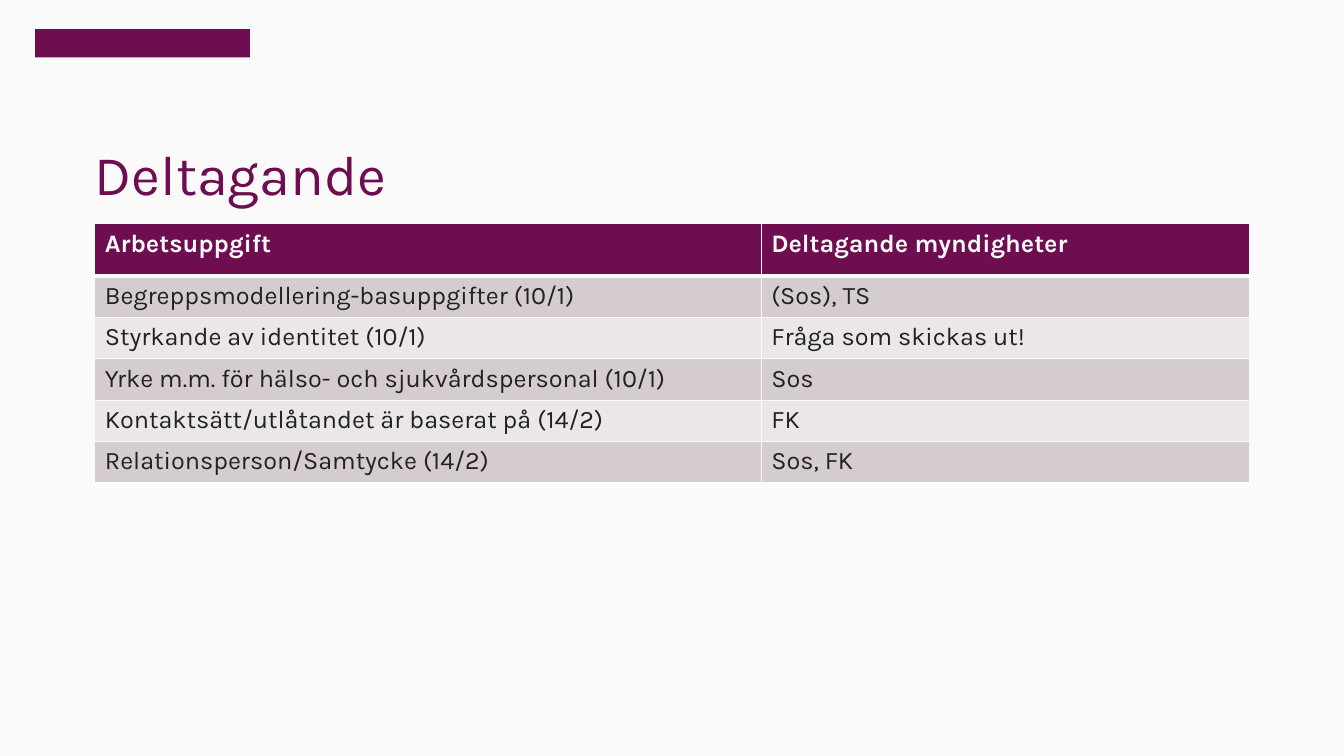
"""Build the slide that lists tasks and the authorities taking part."""
from lxml import etree
from pptx import Presentation
from pptx import util as u
from pptx.dml.color import RGBColor
from pptx.enum import shapes, text
from pptx.oxml.ns import qn

COLORS = {"plum": "6E0E50", "paper": "FAFAFA", "ink": "212121",
          "band": "D5CCD0", "light": "EBE7E9"}
ROWS = [
    ("Arbetsuppgift", "Deltagande myndigheter"),
    ("Begreppsmodellering-basuppgifter (10/1)", "(Sos), TS"),
    ("Styrkande av identitet (10/1)", "Fråga som skickas ut!"),
    ("Yrke m.m. för hälso- och sjukvårdspersonal (10/1)", "Sos"),
    ("Kontaktsätt/utlåtandet är baserat på (14/2)", "FK"),
    ("Relationsperson/Samtycke (14/2)", "Sos, FK"),
]
COL_WIDTHS = (6.61, 4.84)
HEADER_HEIGHT, ROW_HEIGHT = 0.52, 0.41
LEFT, WIDTH = 0.94, 11.45


def rgb(name):
    """Return the named colour."""
    return RGBColor.from_string(COLORS[name])


def paint(fill, color):
    """Give a fill one solid colour."""
    fill.solid()
    fill.fore_color.rgb = rgb(color)


def write(tf, words, size, color, bold=False):
    """Write one formatted line of text and return its paragraph."""
    p = tf.paragraphs[0]
    p.alignment = text.PP_ALIGN.LEFT
    r = p.add_run()
    r.text = words
    for key, value in {"name": "Karla", "size": u.Pt(size), "bold": bold}.items():
        setattr(r.font, key, value)
    r.font.color.rgb = rgb(color)
    return p


def add_title(s, words):
    """Place and format the title placeholder."""
    sp = s.shapes.title
    box = {"left": LEFT, "top": 1.45, "width": WIDTH, "height": 0.61}
    for key, value in box.items():
        setattr(sp, key, u.Inches(value))
    frame = {"margin_left": 0, "margin_top": 0, "margin_right": 0,
             "margin_bottom": 0, "word_wrap": True,
             "vertical_anchor": text.MSO_ANCHOR.BOTTOM,
             "auto_size": text.MSO_AUTO_SIZE.SHAPE_TO_FIT_TEXT}
    for key, value in frame.items():
        setattr(sp.text_frame, key, value)
    write(sp.text_frame, words, 40, "plum").line_spacing = 0.9


def add_mark(s):
    """Draw the plain sender mark in the top corner."""
    sp = s.shapes.add_shape(shapes.MSO_SHAPE.RECTANGLE, u.Inches(0.35),
                            u.Inches(0.29), u.Inches(2.13), u.Inches(0.28))
    sp.shadow.inherit = False
    paint(sp.fill, "plum")
    sp.line.fill.background()


def set_borders(cell, widths):
    """Draw the cell's borders at the given widths in points."""
    tc_pr = cell._tc.get_or_add_tcPr()
    for i, (side, width) in enumerate(widths.items()):
        ln = etree.Element(qn(f"a:ln{side}"), w=str(u.Pt(width)))
        fill = etree.SubElement(ln, qn("a:solidFill"))
        etree.SubElement(fill, qn("a:srgbClr"), val=COLORS["paper"])
        tc_pr.insert(i, ln)


def add_task_table(s):
    """Add the table with its header and banded rows."""
    heights = [HEADER_HEIGHT] + [ROW_HEIGHT] * (len(ROWS) - 1)
    table = s.shapes.add_table(len(ROWS), len(COL_WIDTHS), u.Inches(LEFT),
                               u.Inches(2.22), u.Inches(WIDTH),
                               u.Inches(sum(heights))).table
    for column, width in zip(table.columns, COL_WIDTHS):
        column.width = u.Inches(width)
    for i, (words, height) in enumerate(zip(ROWS, heights)):
        table.rows[i].height = u.Inches(height)
        header = i == 0
        fill = "plum" if header else "band" if i % 2 else "light"
        widths = {"L": 1, "R": 1, "T": 3 if i == 1 else 1, "B": 3 if header else 1}
        for cell, label in zip(table.rows[i].cells, words):
            write(cell.text_frame, label, 18, "paper" if header else "ink", header)
            paint(cell.fill, fill)
            set_borders(cell, widths)


def main():
    """Build and save the slide."""
    prs = Presentation()
    prs.slide_width, prs.slide_height = u.Inches(13.33), u.Inches(7.5)
    s = prs.slides.add_slide(prs.slide_layouts[5])
    paint(s.background.fill, "paper")
    add_mark(s)
    add_title(s, "Deltagande")
    add_task_table(s)
    prs.save("out.pptx")


if __name__ == "__main__":
    main()
